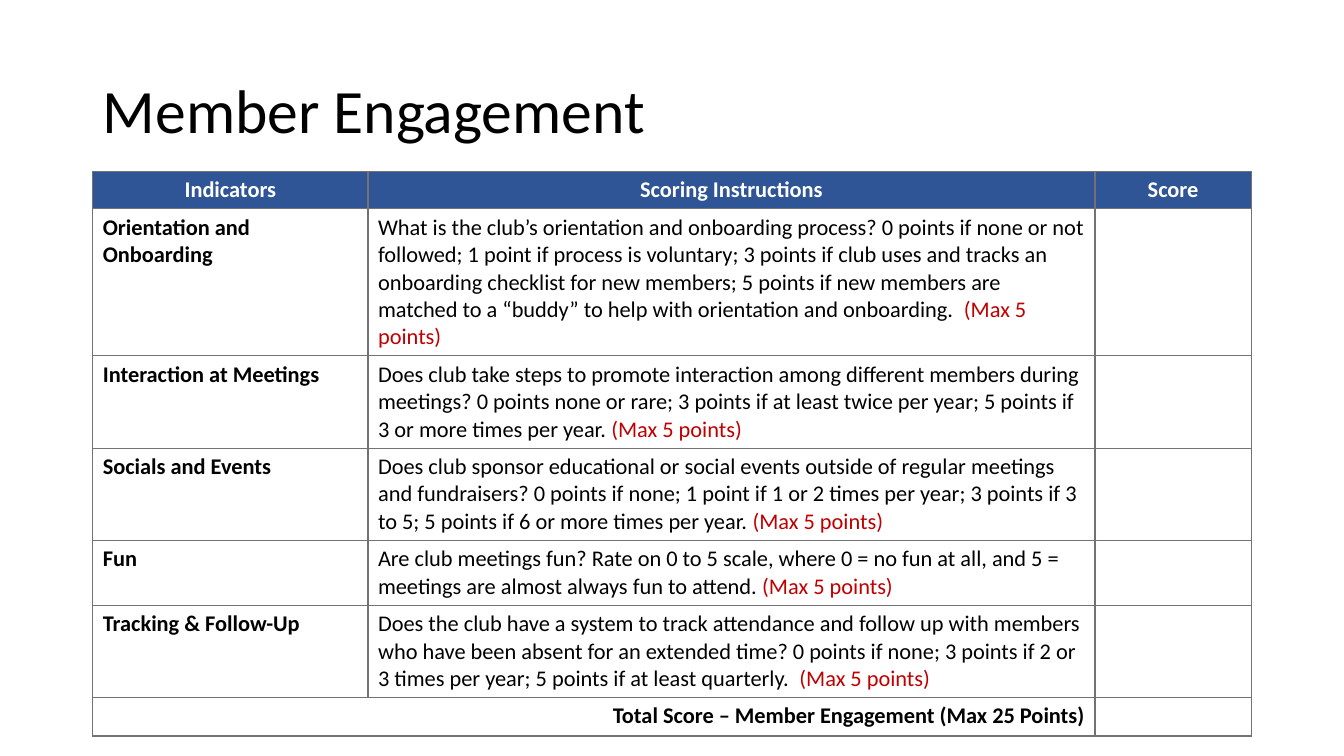
from dataclasses import dataclass

from lxml import etree
from pptx import Presentation
from pptx.dml.color import RGBColor
from pptx.enum import text
from pptx.oxml import ns
from pptx.util import Inches, Pt


@dataclass(frozen=True)
class Theme:
    font: str = "Calibri"
    title_size: int = 44
    table_size: int = 16
    ink: str = "000000"
    header_ink: str = "FFFFFF"
    header_fill: str = "2F5597"
    limit: str = "C00000"
    border: str = "767171"
    border_width: int = 1


THEME = Theme()
ALIGN = text.PP_ALIGN
HEADERS = ["Indicators", "Scoring Instructions", "Score"]
COLUMN_WIDTHS = [2.73, 7.21, 1.55]
EDGE_HEIGHT, INDICATOR_HEIGHT = 0.14, 0.25
LIMIT = "(Max 5 points)"
TOTAL = "Total Score – Member Engagement (Max 25 Points)"
INDICATORS = [
    ("Orientation and Onboarding",
     "What is the club’s orientation and onboarding process? 0 points if none or not "
     "followed; 1 point if process is voluntary; 3 points if club uses and tracks an "
     "onboarding checklist for new members; 5 points if new members are matched to a "
     "“buddy” to help with orientation and onboarding.  "),
    ("Interaction at Meetings",
     "Does club take steps to promote interaction among different members during "
     "meetings? 0 points none or rare; 3 points if at least twice per year; 5 points if "
     "3 or more times per year. "),
    ("Socials and Events",
     "Does club sponsor educational or social events outside of regular meetings and "
     "fundraisers? 0 points if none; 1 point if 1 or 2 times per year; 3 points if 3 to "
     "5; 5 points if 6 or more times per year. "),
    ("Fun",
     "Are club meetings fun? Rate on 0 to 5 scale, where 0 = no fun at all, and 5 = "
     "meetings are almost always fun to attend. "),
    ("Tracking & Follow-Up",
     "Does the club have a system to track attendance and follow up with members who "
     "have been absent for an extended time? 0 points if none; 3 points if 2 or 3 times "
     "per year; 5 points if at least quarterly.  "),
]


def apply(target, values):
    for name, value in values.items():
        setattr(target, name, value)


def add_span(para, words, color, size=THEME.table_size, bold=False):
    span = para.add_run()
    span.text = words
    apply(span.font, {"name": THEME.font, "size": Pt(size), "bold": bold})
    span.font.color.rgb = RGBColor.from_string(color)


def add_title(page, words):
    title = page.shapes.title
    apply(title, {"left": Inches(0.92), "top": Inches(0.4),
                  "width": Inches(11.5), "height": Inches(1.45)})
    apply(title.text_frame, {"vertical_anchor": text.MSO_ANCHOR.MIDDLE,
                             "auto_size": text.MSO_AUTO_SIZE.NONE, "word_wrap": True})
    para = title.text_frame.paragraphs[0]
    apply(para, {"alignment": ALIGN.LEFT, "line_spacing": 0.9})
    add_span(para, words, THEME.ink, THEME.title_size)


def add_borders(cell):
    properties = cell._tc.get_or_add_tcPr()
    for position, side in enumerate(["lnL", "lnR", "lnT", "lnB"]):
        line = etree.Element(ns.qn(f"a:{side}"), w=str(Pt(THEME.border_width)))
        fill = etree.SubElement(line, ns.qn("a:solidFill"))
        etree.SubElement(fill, ns.qn("a:srgbClr"), val=THEME.border)
        properties.insert(position, line)


def fill_cell(cell, spans, align=ALIGN.LEFT, bold=False, fill=None):
    para = cell.text_frame.paragraphs[0]
    para.alignment = align
    for words, color in spans:
        add_span(para, words, color, bold=bold)
    if fill:
        cell.fill.solid()
        cell.fill.fore_color.rgb = RGBColor.from_string(fill)
    else:
        cell.fill.background()
    add_borders(cell)


def add_score_table(page):
    heights = [EDGE_HEIGHT, *[INDICATOR_HEIGHT] * len(INDICATORS), EDGE_HEIGHT]
    frame = page.shapes.add_table(len(heights), len(HEADERS), Inches(0.92), Inches(1.7),
                                  Inches(sum(COLUMN_WIDTHS)), Inches(sum(heights)))
    table = frame.table
    apply(table, {"first_row": False, "horz_banding": False})
    for column, width in zip(table.columns, COLUMN_WIDTHS):
        column.width = Inches(width)
    for row, height in zip(table.rows, heights):
        row.height = Inches(height)

    for column, words in enumerate(HEADERS):
        fill_cell(table.cell(0, column), [(words, THEME.header_ink)],
                  ALIGN.CENTER, True, THEME.header_fill)
    blank = [("", THEME.ink)]
    for row, (indicator, instructions) in enumerate(INDICATORS, 1):
        fill_cell(table.cell(row, 0), [(indicator, THEME.ink)], bold=True)
        fill_cell(table.cell(row, 1), [(instructions, THEME.ink), (LIMIT, THEME.limit)])
        fill_cell(table.cell(row, 2), blank)

    total_row = len(heights) - 1
    table.cell(total_row, 0).merge(table.cell(total_row, 1))
    fill_cell(table.cell(total_row, 0), [(TOTAL, THEME.ink)], ALIGN.RIGHT, True)
    add_borders(table.cell(total_row, 1))
    fill_cell(table.cell(total_row, 2), blank)


def main():
    deck = Presentation()
    apply(deck, {"slide_width": Inches(13.33), "slide_height": Inches(7.5)})
    page = deck.slides.add_slide(deck.slide_layouts.get_by_name("Title Only"))
    add_title(page, "Member Engagement")
    add_score_table(page)
    deck.save("out.pptx")


if __name__ == "__main__":
    main()
